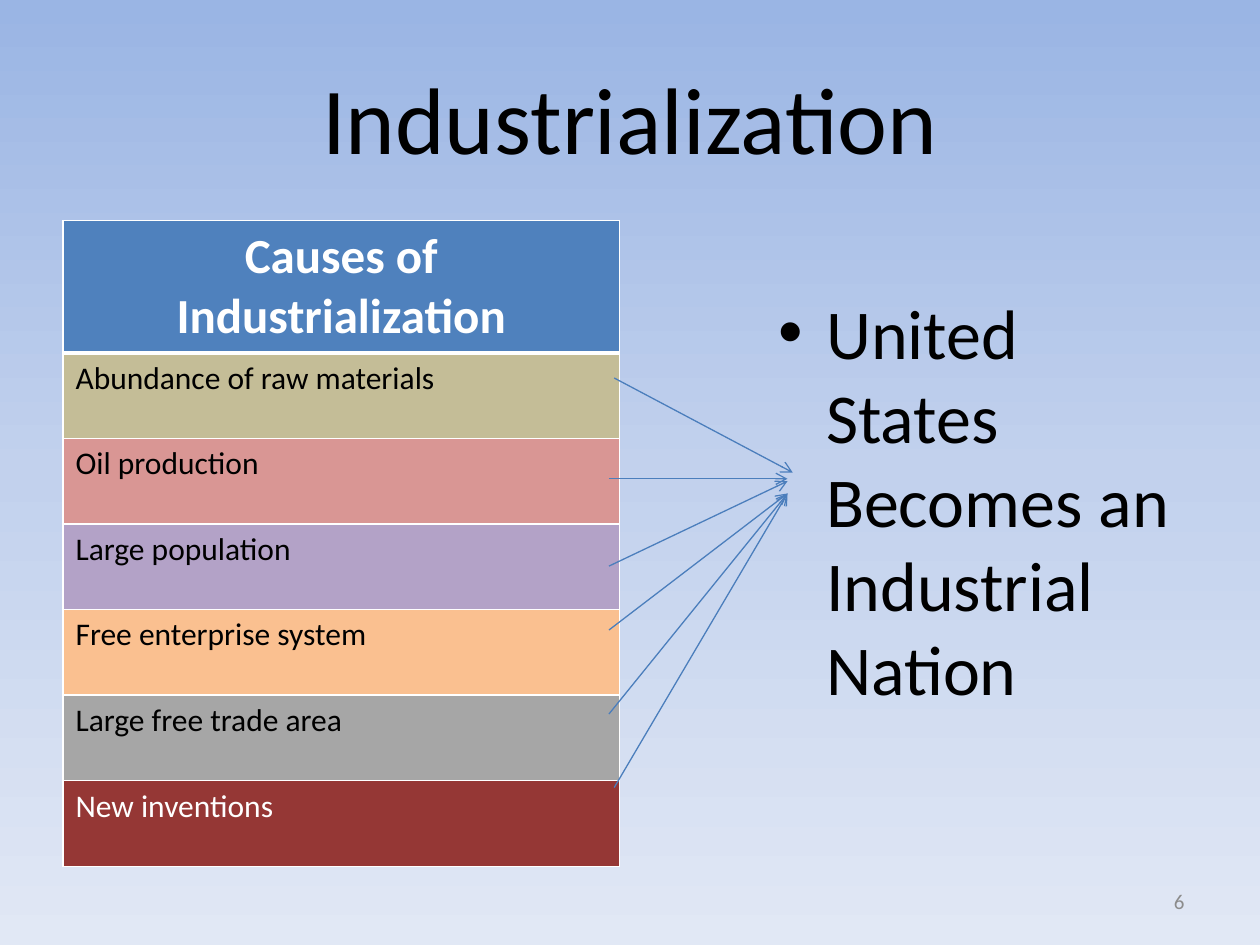
from copy import deepcopy
from dataclasses import dataclass

from pptx import Presentation
from pptx.dml.color import RGBColor as Color
from pptx.enum.shapes import MSO_CONNECTOR as Connector
from pptx.enum.text import MSO_ANCHOR as Anchor, PP_ALIGN as Align
from pptx.oxml.ns import qn
from pptx.util import Pt
from lxml.etree import SubElement


@dataclass(frozen=True)
class Theme:
    font: str = "Calibri"
    dark: str = "000000"
    light: str = "FFFFFF"
    muted: str = "8C8C8C"
    header: str = "4F81BD"
    arrow: str = "4B7EBC"
    background: tuple = ((0, "9AB5E4"), (0.5, "C2D1ED"), (1, "E1E8F5"))
    title_size: float = 54
    body_size: float = 40
    header_size: float = 28
    cell_size: float = 18
    number_size: float = 12


class SlideBuilder:
    def __init__(self, slide, theme):
        self.slide = slide
        self.theme = theme

    def format(self, paragraph, size, color, align=Align.LEFT, bold=False):
        paragraph.alignment = align
        font = paragraph.font
        font.name, font.size, font.bold = self.theme.font, Pt(size), bold
        font.color.rgb = Color.from_string(color)

    def background(self):
        fill = self.slide.background.fill
        fill.gradient()
        fill.gradient_angle = 270
        stop_list = self.slide.element.find(".//" + qn("a:gsLst"))
        stop_list.append(deepcopy(stop_list[0]))
        for stop, (position, color) in zip(fill.gradient_stops, self.theme.background):
            stop.position = position
            stop.color.rgb = Color.from_string(color)

    def title(self, text, left, top, width, height):
        shape = self.slide.shapes.title
        shape.left, shape.top = Pt(left), Pt(top)
        shape.width, shape.height = Pt(width), Pt(height)
        shape.text_frame.text = text
        shape.text_frame.vertical_anchor = Anchor.MIDDLE
        self.format(shape.text_frame.paragraphs[0], self.theme.title_size,
                    self.theme.dark, Align.CENTER)

    def text(self, text, left, top, width, height, size, color,
             align=Align.LEFT, anchor=Anchor.TOP):
        box = self.slide.shapes.add_textbox(Pt(left), Pt(top), Pt(width), Pt(height))
        frame = box.text_frame
        frame.word_wrap = True
        frame.vertical_anchor = anchor
        frame.text = text
        paragraph = frame.paragraphs[0]
        self.format(paragraph, size, color, align)
        return paragraph

    def bullet(self, text, left, top, width, height):
        paragraph = self.text(text, left, top, width, height,
                              self.theme.body_size, self.theme.dark)
        paragraph.space_before = Pt(8)
        properties = paragraph._p.get_or_add_pPr()
        properties.set("marL", str(Pt(27)))
        properties.set("indent", str(-Pt(27)))
        bullet_font = SubElement(properties, qn("a:buFont"), typeface="Arial")
        bullet_font.addnext(properties.makeelement(qn("a:buChar"), {"char": "•"}))
        # Default run properties come last in the schema
        properties.append(properties.find(qn("a:defRPr")))

    def border(self, cell, **widths):
        properties = cell._tc.get_or_add_tcPr()
        for side in "LRTB":
            width = Pt(widths.get(side, 1))
            line = SubElement(properties, qn(f"a:ln{side}"), w=str(width))
            fill = SubElement(line, qn("a:solidFill"))
            SubElement(fill, qn("a:srgbClr"), val=self.theme.light)

    def table(self, header, rows, left, top, width, header_height, row_height):
        theme = self.theme
        height = header_height + row_height * len(rows)
        table = self.slide.shapes.add_table(len(rows) + 1, 1, Pt(left), Pt(top),
                                            Pt(width), Pt(height)).table
        table.horz_banding = False
        for index, (text, fill, color) in enumerate([(header, theme.header, theme.light), *rows]):
            is_header = index == 0
            table.rows[index].height = Pt(header_height if is_header else row_height)
            cell = table.cell(index, 0)
            cell.text = text
            self.format(cell.text_frame.paragraphs[0],
                        theme.header_size if is_header else theme.cell_size, color,
                        Align.CENTER if is_header else Align.LEFT, is_header)
            self.border(cell, B=3 if is_header else 1, T=3 if index == 1 else 1)
            cell.fill.solid()
            cell.fill.fore_color.rgb = Color.from_string(fill)

    def arrow(self, start, end):
        connector = self.slide.shapes.add_connector(
            Connector.STRAIGHT, *(Pt(value) for value in (*start, *end)))
        connector.line.width = Pt(0.75)
        connector.line.color.rgb = Color.from_string(self.theme.arrow)
        SubElement(connector.line._get_or_add_ln(), qn("a:tailEnd"), type="arrow")
        SubElement(connector._element.spPr, qn("a:effectLst"))


def main():
    theme = Theme()
    presentation = Presentation()
    presentation.slide_width, presentation.slide_height = Pt(720), Pt(540)
    slide = presentation.slides.add_slide(presentation.slide_layouts[5])
    builder = SlideBuilder(slide, theme)

    # Background and title
    builder.background()
    builder.title("Industrialization", 36, 21.6, 648, 90)

    # Causes
    causes = [
        ("Abundance of raw materials", "C4BD97", theme.dark),
        ("Oil production", "D99694", theme.dark),
        ("Large population", "B3A2C7", theme.dark),
        ("Free enterprise system", "FAC090", theme.dark),
        ("Large free trade area", "A6A6A6", theme.dark),
        ("New inventions", "953735", theme.light),
    ]
    builder.table("Causes of Industrialization", causes, 36, 126, 318, 75.2, 48.9)

    # Effect
    builder.bullet("United States Becomes an Industrial Nation", 438, 162, 246, 156)

    # Arrows from each cause to the effect
    arrows = [
        ((351, 216), (453, 270)),
        ((348, 273.6), (450, 273.6)),
        ((348, 323.5), (450, 275)),
        ((348, 360), (450, 282)),
        ((348, 408), (450, 282)),
        ((351, 450), (450, 282)),
    ]
    for start, end in arrows:
        builder.arrow(start, end)

    # Slide number
    builder.text("6", 516, 500.5, 168, 28.75, theme.number_size, theme.muted,
                 Align.RIGHT, Anchor.MIDDLE)

    presentation.save("out.pptx")


if __name__ == "__main__":
    main()
